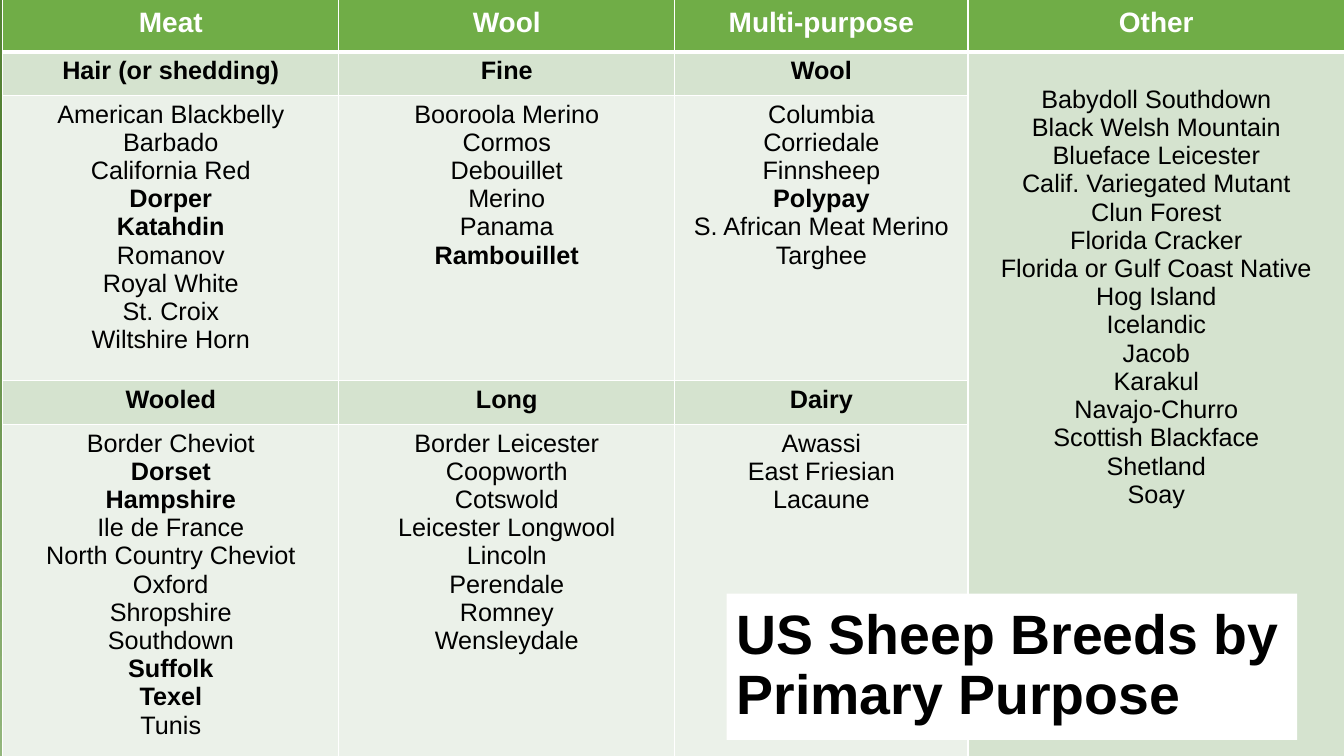
import pptx
import pptx.util
import pptx.dml.color
import pptx.enum.text
from lxml import etree

Pt = pptx.util.Pt
ALIGN = pptx.enum.text.PP_ALIGN
ANCHOR = pptx.enum.text.MSO_ANCHOR
NS = "http://schemas.openxmlformats.org/drawingml/2006/main"

COLORS = {
    "head": "70AD47", "group": "D5E3CF", "list": "EBF1E9",
    "white": "FFFFFF", "black": "000000",
    "dark": "548235", "light": "C5E0B4",
}
COLS = [240, 240, 209.5, 269]
ROWS = [41, 31, 204, 31, 244]
HEADS = ["Meat", "Wool", "Multi-purpose", "Other"]
GROUPS = [
    ["Hair (or shedding)", "Fine", "Wool"],
    ["Wooled", "Long", "Dairy"],
]
BREEDS = [
    [
        ["American Blackbelly", "Barbado", "California Red", "*Dorper",
         "*Katahdin", "Romanov", "Royal White", "St. Croix", "Wiltshire Horn"],
        ["Booroola Merino", "Cormos", "Debouillet", "Merino", "Panama",
         "*Rambouillet"],
        ["Columbia", "Corriedale", "Finnsheep", "*Polypay",
         "S. African Meat Merino", "Targhee"],
    ],
    [
        ["Border Cheviot", "*Dorset", "*Hampshire", "Ile de France",
         "North Country Cheviot", "Oxford", "Shropshire", "Southdown",
         "*Suffolk", "*Texel", "Tunis"],
        ["Border Leicester", "Coopworth", "Cotswold", "Leicester Longwool",
         "Lincoln", "Perendale", "Romney", "Wensleydale"],
        ["Awassi", "East Friesian", "Lacaune"],
    ],
]
OTHER = [
    "Babydoll Southdown", "Black Welsh Mountain", "Blueface Leicester",
    "Calif. Variegated Mutant", "Clun Forest", "Florida Cracker",
    "Florida or Gulf Coast Native", "Hog Island", "Icelandic", "Jacob",
    "Karakul", "Navajo-Churro", "Scottish Blackface", "Shetland", "Soay",
]


def rgb(name):
    return pptx.dml.color.RGBColor.from_string(COLORS[name])


def style(font, size, color, bold):
    font.name = "Arial"
    font.size = Pt(size)
    font.bold = bold
    font.color.rgb = rgb(color)


def edge(cell, row):
    props = cell._tc.get_or_add_tcPr()
    for side in "LRTB":
        thick = (row, side) in [(0, "B"), (1, "T")]
        line = etree.SubElement(props, f"{{{NS}}}ln{side}", w=str(Pt(3 if thick else 1)))
        fill = etree.SubElement(line, f"{{{NS}}}solidFill")
        etree.SubElement(fill, f"{{{NS}}}srgbClr", val=COLORS["white"])


def write(cell, lines, fill, size=18, color="black"):
    cell.fill.solid()
    cell.fill.fore_color.rgb = rgb(fill)
    frame = cell.text_frame
    for i, line in enumerate(lines):
        para = frame.add_paragraph() if i else frame.paragraphs[0]
        para.text = line.lstrip("*")
        para.alignment = ALIGN.CENTER
        style(para.font, size, color, line.startswith("*"))


def add_breeds(slide, left, top, width, height):
    frame = slide.shapes.add_table(len(ROWS), len(COLS), Pt(left), Pt(top), Pt(width), Pt(height))
    table = frame.table
    for col, size in zip(table.columns, COLS):
        col.width = Pt(size)
    for row, size in zip(table.rows, ROWS):
        row.height = Pt(size)
    for r in range(len(ROWS)):
        for c in range(len(COLS)):
            edge(table.cell(r, c), r)
    for c, head in enumerate(HEADS):
        cell = table.cell(0, c)
        write(cell, ["*" + head], "head", 20, "white")
        cell.vertical_anchor = ANCHOR.MIDDLE
    for b, (names, lists) in enumerate(zip(GROUPS, BREEDS)):
        for c, (name, breeds) in enumerate(zip(names, lists)):
            write(table.cell(1 + 2 * b, c), ["*" + name], "group")
            write(table.cell(2 + 2 * b, c), breeds, "list")
    other = table.cell(1, 3)
    other.merge(table.cell(4, 3))
    other.margin_top = Pt(24)
    write(other, OTHER, "group")


def add_title(slide, left, top, width, height):
    title = slide.shapes.title
    title.left, title.top = Pt(left), Pt(top)
    title.width, title.height = Pt(width), Pt(height)
    title.fill.solid()
    title.fill.fore_color.rgb = rgb("white")
    frame = title.text_frame
    frame.word_wrap = True
    frame.auto_size = pptx.enum.text.MSO_AUTO_SIZE.NONE
    frame.vertical_anchor = ANCHOR.MIDDLE
    para = frame.paragraphs[0]
    para.text = "US Sheep Breeds by Primary Purpose"
    para.alignment = ALIGN.LEFT
    para.line_spacing = 0.9
    style(para.font, 39.6, "black", True)
    slide.shapes._spTree.append(title._element)


def add_back(slide):
    fill = slide.background.fill
    fill.gradient()
    fill.gradient_angle = 290
    for stop, name, place in zip(fill.gradient_stops, ["dark", "light"], [0.11, 1]):
        stop.color.rgb = rgb(name)
        stop.position = place


def main():
    deck = pptx.Presentation()
    deck.slide_width, deck.slide_height = Pt(960), Pt(540)
    slide = deck.slides.add_slide(deck.slide_layouts[5])
    add_back(slide)
    add_breeds(slide, 2, -4, sum(COLS), sum(ROWS))
    add_title(slide, 519, 424, 407.5, 104.5)
    deck.save("out.pptx")


if __name__ == "__main__":
    main()
